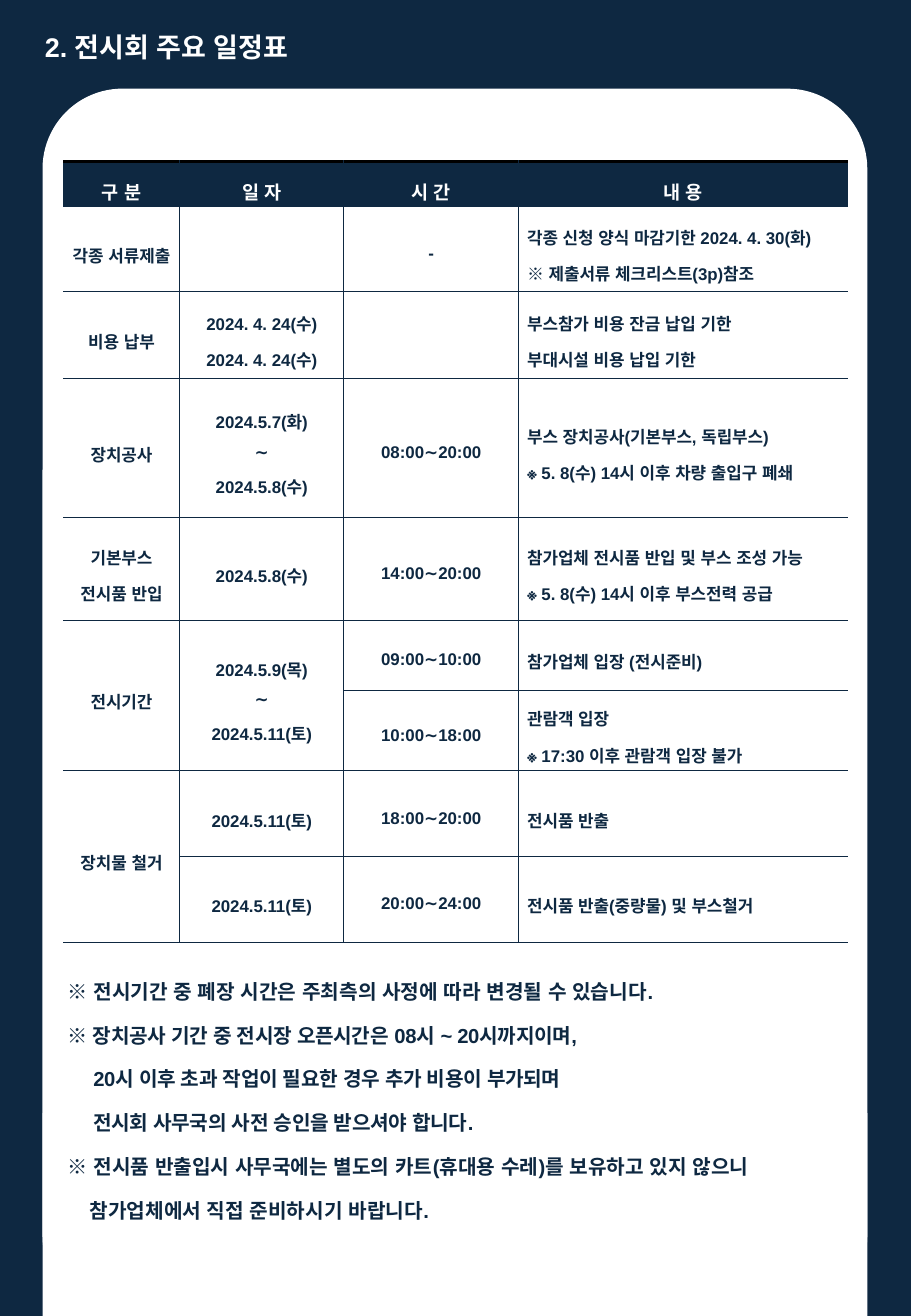
from lxml.etree import SubElement
from pptx import Presentation
from pptx.dml.color import RGBColor
from pptx.enum.shapes import MSO_SHAPE
from pptx.enum.text import MSO_ANCHOR, MSO_AUTO_SIZE, PP_ALIGN
from pptx.oxml.ns import qn
from pptx.util import Inches, Pt

COLORS = {"navy": "0E2841", "white": "FFFFFF", "black": "000000"}


def rgb(name):
    return RGBColor.from_string(COLORS[name])


def write(paragraph, text, size, color, spacing=0, **layout):
    """Add one bold, unkerned run and apply the paragraph settings given in layout."""
    run = paragraph.add_run()
    run.text = text
    for key, value in {"size": Pt(size), "name": "Arial", "bold": True}.items():
        setattr(run.font, key, value)
    run.font.color.rgb = rgb(color)
    for key, value in {"lang": "ko-KR", "kern": "0", "spc": str(spacing)}.items():
        run._r.get_or_add_rPr().set(key, value)
    for key, value in layout.items():
        setattr(paragraph, key, value)


prs = Presentation()
prs.slide_width, prs.slide_height = Inches(7.5), Inches(10.83)
slide = prs.slides.add_slide(prs.slide_layouts[5])
slide.background.fill.solid()
slide.background.fill.fore_color.rgb = rgb("navy")

# Heading
title = slide.shapes.title
title.left, title.top = Inches(0.27), Inches(0.2)
title.width, title.height = Inches(2.41), Inches(0.37)
heading = title.text_frame
heading.word_wrap = False
heading.auto_size = MSO_AUTO_SIZE.NONE
heading.vertical_anchor = MSO_ANCHOR.TOP
write(heading.paragraphs[0], "2. 전시회 주요 일정표", 16, "white", alignment=PP_ALIGN.LEFT)

# White panel: rounded sheet with a square foot
for top, height, rounding in [(0.73, 10.1, 0.097), (9.16, 1.67, 0)]:
    panel = slide.shapes.add_shape(
        MSO_SHAPE.ROUNDED_RECTANGLE, Inches(0.35), Inches(top), Inches(6.79), Inches(height))
    panel.adjustments[0] = rounding
    panel.shadow.inherit = False
    panel.fill.solid()
    panel.fill.fore_color.rgb = rgb("white")
    panel.line.fill.background()

# Schedule: row height, then category, date, time and details
schedule_rows = [
    (0.36, "구 분", "일 자", "시 간", "내 용"),
    (0.7, "각종 서류제출", "", "-",
     "각종 신청 양식 마감기한 2024. 4. 30(화)\n※ 제출서류 체크리스트(3p)참조"),
    (0.71, "비용 납부", "2024. 4. 24(수)\n2024. 4. 24(수)", "",
     "부스참가 비용 잔금 납입 기한\n부대시설 비용 납입 기한"),
    (1.15, "장치공사", "2024.5.7(화)\n∼\n2024.5.8(수)", "08:00∼20:00",
     "부스 장치공사(기본부스, 독립부스)\n※ 5. 8(수) 14시 이후 차량 출입구 폐쇄"),
    (0.84, "기본부스\n전시품 반입", "2024.5.8(수)", "14:00∼20:00",
     "참가업체 전시품 반입 및 부스 조성 가능\n※ 5. 8(수) 14시 이후 부스전력 공급"),
    (0.58, "전시기간", "2024.5.9(목)\n∼\n2024.5.11(토)", "09:00∼10:00",
     "참가업체 입장 (전시준비)"),
    (0.66, "", "", "10:00∼18:00", "관람객 입장\n※ 17:30 이후 관람객 입장 불가"),
    (0.71, "장치물 철거", "2024.5.11(토)", "18:00∼20:00", "전시품 반출"),
    (0.7, "", "2024.5.11(토)", "20:00∼24:00", "전시품 반출(중량물) 및 부스철거"),
]
column_widths = [0.96, 1.35, 1.44, 2.71]
last_column = len(column_widths) - 1

schedule = slide.shapes.add_table(
    len(schedule_rows), len(column_widths),
    Inches(0.52), Inches(1.33), Inches(6.46), Inches(6.41)).table
for column, width in zip(schedule.columns, column_widths):
    column.width = Inches(width)
for row, col in [(5, 0), (5, 1), (7, 0)]:
    schedule.cell(row, col).merge(schedule.cell(row + 1, col))

for r, (height, *texts) in enumerate(schedule_rows):
    schedule.rows[r].height = Inches(height)
    for c, text in enumerate(texts):
        cell = schedule.cell(r, c)
        is_header = r == 0
        is_detail = c == last_column and not is_header
        for side in ("left", "right", "top", "bottom"):
            setattr(cell, f"margin_{side}", Inches(0.02))
        cell.vertical_anchor = MSO_ANCHOR.MIDDLE

        borders = {
            "lnL": ("navy", 0.5 if c > 0 else 0),
            "lnR": ("navy", 0.5 if c < last_column else 0),
            "lnT": ("black", 1.7) if is_header else ("navy", 0.5),
            "lnB": ("navy", 0.5),
        }
        for tag, (color, weight) in borders.items():
            border = SubElement(cell._tc.get_or_add_tcPr(), qn(f"a:{tag}"), w=str(Pt(weight)))
            if weight:
                fill = SubElement(border, qn("a:solidFill"))
                SubElement(fill, qn("a:srgbClr"), val=COLORS[color])
            else:
                SubElement(border, qn("a:noFill"))
        cell.fill.solid()
        cell.fill.fore_color.rgb = rgb("navy" if is_header else "white")

        if not text:
            continue
        for i, line in enumerate(text.split("\n")):
            frame = cell.text_frame
            paragraph = frame.add_paragraph() if i else frame.paragraphs[0]
            write(paragraph, line, 11 if is_header else 10, "white" if is_header else "navy",
                  line_spacing=1.5,
                  alignment=PP_ALIGN.JUSTIFY if is_detail else PP_ALIGN.CENTER)
            if is_detail:
                paragraph._p.get_or_add_pPr().set("marL", str(Inches(0.05)))

# Notes: text, left indent, character spacing in hundredths of a point
notes = [
    ("※ 전시기간 중 폐장 시간은 주최측의 사정에 따라 변경될 수 있습니다.", 0.46, 0),
    ("※ 장치공사 기간 중 전시장 오픈시간은 08시 ~ 20시까지이며,", 0.46, -20),
    ("20시 이후 초과 작업이 필요한 경우 추가 비용이 부가되며", 0.67, -20),
    ("전시회 사무국의 사전 승인을 받으셔야 합니다.", 0.67, -20),
    ("※ 전시품 반출입시 사무국에는 별도의 카트(휴대용 수레)를 보유하고 있지 않으니", 0.46, 0),
    ("참가업체에서 직접 준비하시기 바랍니다.", 0.64, 0),
]
notes_frame = slide.shapes.add_textbox(
    Inches(0), Inches(7.85), Inches(6.83), Inches(2.48)).text_frame
notes_frame.word_wrap = True
for i, (text, indent, spacing) in enumerate(notes):
    paragraph = notes_frame.add_paragraph() if i else notes_frame.paragraphs[0]
    write(paragraph, text, 12, "navy", spacing, line_spacing=1.8)
    paragraph._p.get_or_add_pPr().set("marL", str(Inches(indent)))

prs.save("out.pptx")
